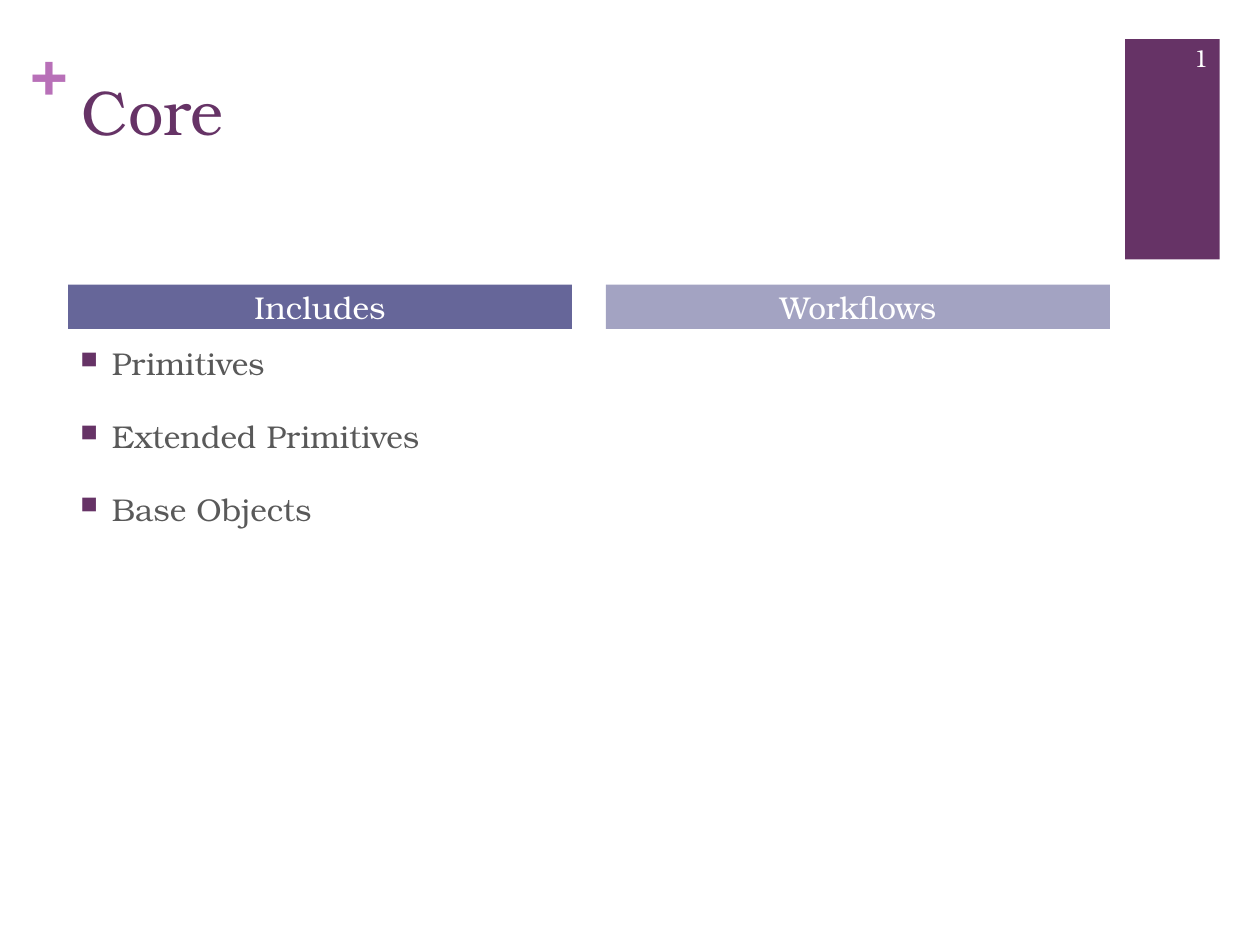
from lxml.etree import SubElement
from pptx import Presentation
from pptx.dml.color import RGBColor
from pptx.enum.shapes import MSO_SHAPE
from pptx.enum.text import MSO_ANCHOR, PP_ALIGN
from pptx.oxml.ns import qn
from pptx.util import Inches, Pt

COLORS = {
    "plum": "663366",
    "orchid": "B870B8",
    "indigo": "666699",
    "lavender": "A3A3C2",
    "gray": "595959",
    "white": "FFFFFF",
}


class SlideBuilder:
    font = "TeX Gyre Bonum"
    body_size = 18

    def __init__(self, slide):
        self.slide = slide

    def color(self, name):
        return RGBColor.from_string(COLORS[name])

    def rectangle(self, left, top, width, height, fill):
        shape = self.slide.shapes.add_shape(
            MSO_SHAPE.RECTANGLE,
            Inches(left), Inches(top), Inches(width), Inches(height))
        shape.shadow.inherit = False
        shape.fill.solid()
        shape.fill.fore_color.rgb = self.color(fill)
        shape.line.fill.background()
        return shape

    def text_frame(self, left, top, width, height, anchor=MSO_ANCHOR.TOP):
        box = self.slide.shapes.add_textbox(
            Inches(left), Inches(top), Inches(width), Inches(height))
        frame = box.text_frame
        frame.word_wrap = True
        frame.vertical_anchor = anchor
        return frame

    def run(self, paragraph, text, size, color, bold=False):
        run = paragraph.add_run()
        run.text = text
        run.font.name = self.font
        run.font.size = Pt(size)
        run.font.bold = bold
        run.font.color.rgb = self.color(color)

    def label(self, text, left, top, width, height, size, color,
              align=PP_ALIGN.LEFT, anchor=MSO_ANCHOR.TOP, bold=False, inset=None):
        frame = self.text_frame(left, top, width, height, anchor)
        if inset is not None:
            frame.margin_left = frame.margin_right = Inches(inset)
            frame.margin_top = frame.margin_bottom = Inches(inset)
        paragraph = frame.paragraphs[0]
        paragraph.alignment = align
        self.run(paragraph, text, size, color, bold)

    def column_heading(self, text, left, top, width, height, fill):
        frame = self.rectangle(left, top, width, height, fill).text_frame
        frame.word_wrap = True
        frame.vertical_anchor = MSO_ANCHOR.MIDDLE
        frame.margin_top = frame.margin_bottom = 0
        paragraph = frame.paragraphs[0]
        paragraph.alignment = PP_ALIGN.CENTER
        self.run(paragraph, text, self.body_size, "white")

    def bullet_list(self, items, left, top, width, height):
        frame = self.text_frame(left, top, width, height)
        for index, item in enumerate(items):
            paragraph = frame.add_paragraph() if index else frame.paragraphs[0]
            paragraph.space_before = Pt(20)
            self.square_bullet(paragraph)
            self.run(paragraph, item, self.body_size, "gray")

    def square_bullet(self, paragraph):
        """Give the paragraph a hanging indent and a small plum square."""
        properties = paragraph._p.get_or_add_pPr()
        properties.set("marL", str(Inches(0.25)))
        properties.set("indent", str(-Inches(0.25)))
        bullet_color = SubElement(properties, qn("a:buClr"))
        SubElement(bullet_color, qn("a:srgbClr"), val=COLORS["plum"])
        SubElement(properties, qn("a:buSzPct"), val="75000")
        SubElement(properties, qn("a:buChar"), char="■")


def main():
    presentation = Presentation()
    presentation.slide_width = Inches(10)
    presentation.slide_height = Inches(7.5)
    builder = SlideBuilder(
        presentation.slides.add_slide(presentation.slide_layouts[6]))

    builder.rectangle(8.93, 0.31, 0.75, 1.75, "plum")
    builder.label("+", 0.24, 0.25, 0.29, 0.61, 36, "orchid", bold=True, inset=0)
    builder.label("Core", 0.55, 0.53, 8.26, 1.22, 36, "plum")

    column_left, column_width, column_gap = 0.54, 4, 0.27
    builder.bullet_list(["Primitives", "Extended Primitives", "Base Objects"],
                        column_left, 2.68, column_width, 4.02)
    headings = [("Includes", "indigo"), ("Workflows", "lavender")]
    for index, (heading, fill) in enumerate(headings):
        left = column_left + index * (column_width + column_gap)
        builder.column_heading(heading, left, 2.26, column_width, 0.35, fill)

    builder.label("1", 9.08, 0.26, 0.61, 0.4, 14, "white",
                  align=PP_ALIGN.RIGHT, anchor=MSO_ANCHOR.MIDDLE)
    presentation.save("out.pptx")


if __name__ == "__main__":
    main()
